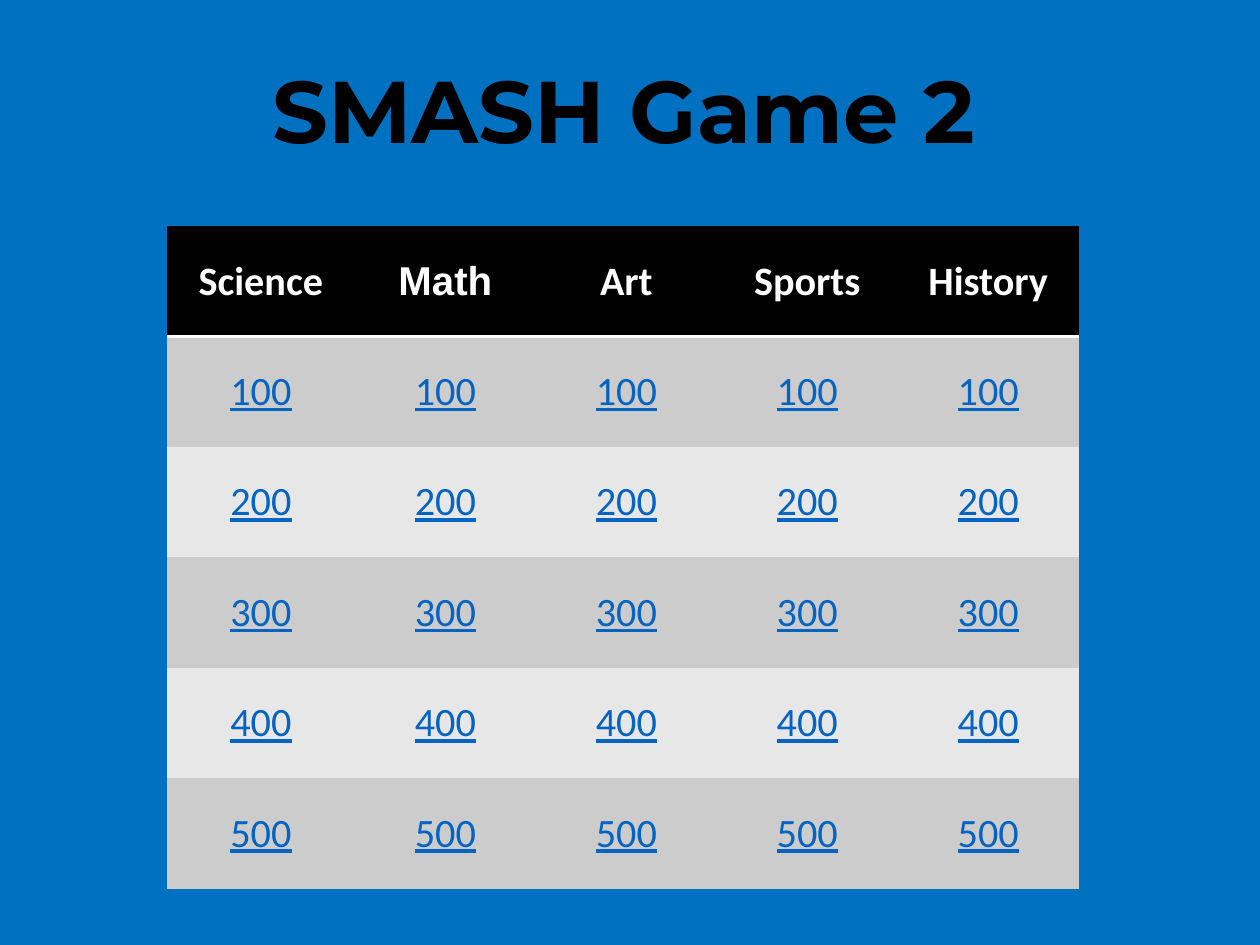
from lxml.etree import SubElement
from pptx import Presentation
from pptx.dml.color import RGBColor
from pptx.enum.text import MSO_ANCHOR, MSO_AUTO_SIZE, PP_ALIGN
from pptx.oxml.ns import qn
from pptx.util import Pt

PX = 914400 / 126
NO_GRID_STYLE = "{2D5ABB26-0587-4C30-8999-92F81FD0307C}"
CATEGORIES = ["Science", "Math", "Art", "Sports", "History"]
POINTS = [100, 200, 300, 400, 500]


def px(*lengths):
    return [round(n * PX) for n in lengths]


def write(tf, text, color, **font):
    """Put one centred run of text in the frame and format it."""
    p = tf.paragraphs[0]
    p.alignment = PP_ALIGN.CENTER
    r = p.add_run()
    r.text = text
    for name, value in font.items():
        setattr(r.font, name, value)
    r.font.color.rgb = RGBColor.from_string(color)
    return p


prs = Presentation()
prs.slide_width, prs.slide_height = px(1260, 945)
s = prs.slides.add_slide(prs.slide_layouts[5])
s.background.fill.solid()
s.background.fill.fore_color.rgb = RGBColor.from_string("0070C0")

title = s.shapes.title
title.left, title.top, title.width, title.height = px(217, 77, 814, 77)
tf = title.text_frame
tf.auto_size = MSO_AUTO_SIZE.NONE
tf.vertical_anchor = MSO_ANCHOR.MIDDLE
p = write(tf, "SMASH Game 2", "000000", name="Montserrat", size=Pt(50), bold=True)
p.line_spacing = 0.9

rows = [CATEGORIES] + [[str(n)] * len(CATEGORIES) for n in POINTS]
frame = s.shapes.add_table(len(rows), len(CATEGORIES), *px(167, 226, 912, 663))
table = frame.table
table._tbl.tblPr.find(qn("a:tableStyleId")).text = NO_GRID_STYLE
for column, width in zip(table.columns, px(188, 181, 181, 181, 181)):
    column.width = width

for i, row in enumerate(rows):
    header = i == 0
    fill = "000000" if header else ("CCCCCC" if i % 2 else "E7E7E7")
    for j, text in enumerate(row):
        cell = table.cell(i, j)
        cell.vertical_anchor = MSO_ANCHOR.MIDDLE
        cell.margin_left, cell.margin_right = px(10, 10)
        cell.margin_top, cell.margin_bottom = px(5, 5)
        if header:
            line = SubElement(cell._tc.get_or_add_tcPr(), qn("a:lnB"), w=str(Pt(2)))
            solid = SubElement(line, qn("a:solidFill"))
            SubElement(solid, qn("a:srgbClr"), val="FFFFFF")
        cell.fill.solid()
        cell.fill.fore_color.rgb = RGBColor.from_string(fill)
        write(cell.text_frame, text, "FFFFFF" if header else "0563C1",
              name="Arial" if text == "Math" else "Calibri",
              size=Pt(23), bold=header, underline=not header)

prs.save("out.pptx")
